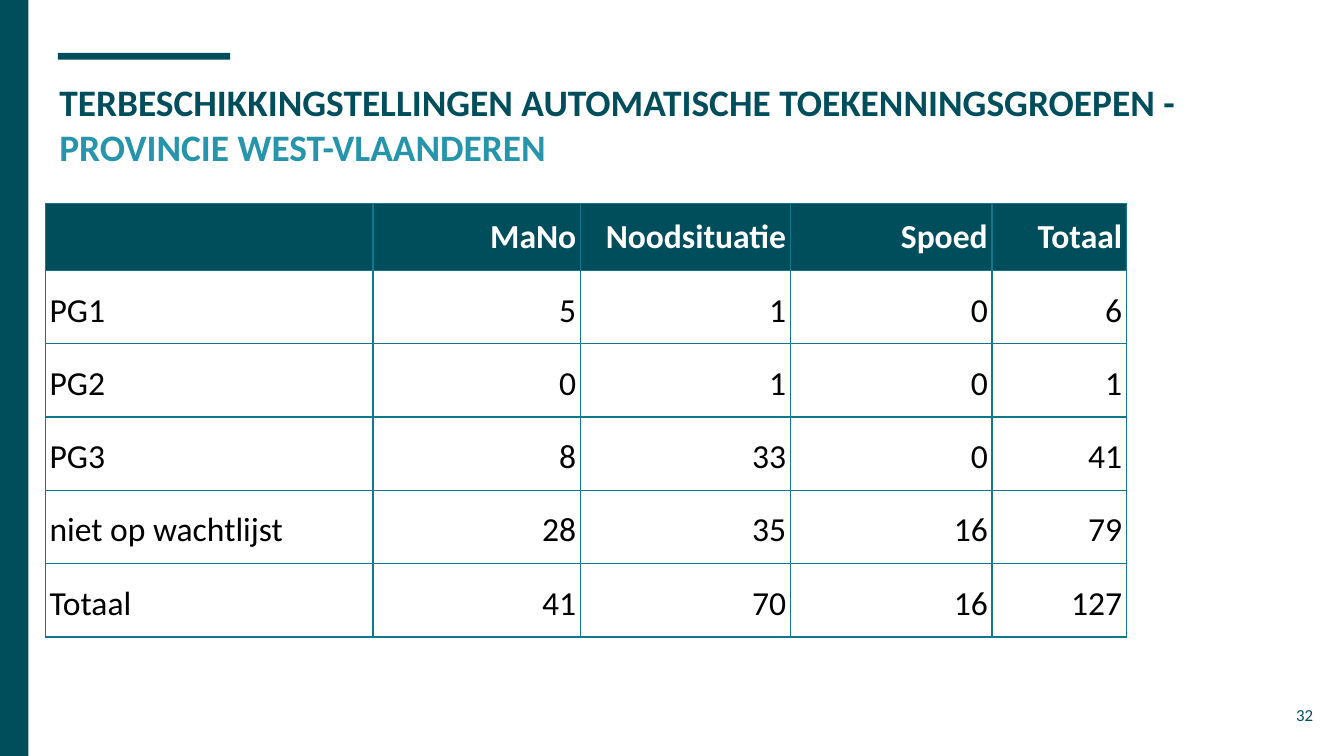
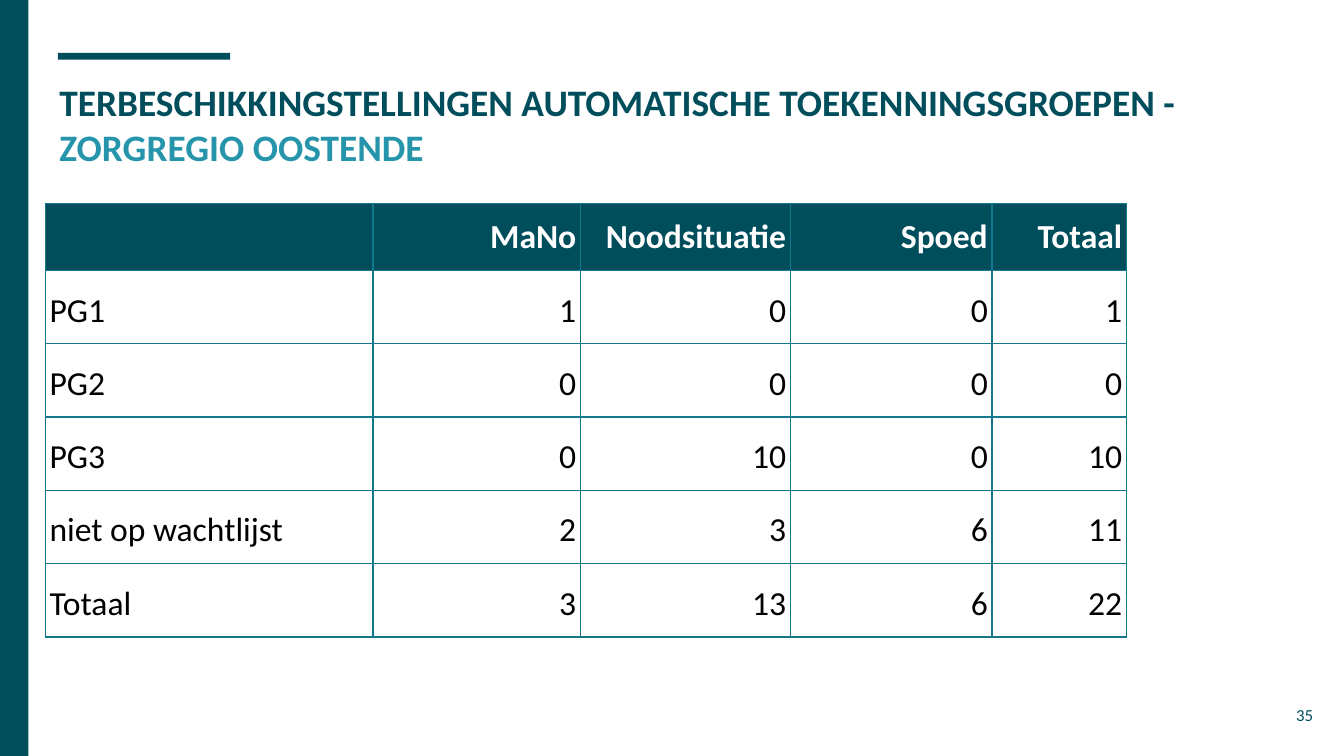
from lxml.etree import SubElement
from pptx import Presentation
from pptx.dml.color import RGBColor
from pptx.enum.shapes import MSO_SHAPE as Shape
from pptx.enum.text import MSO_ANCHOR as Anchor, PP_ALIGN as Align
from pptx.oxml.ns import qn
from pptx.util import Emu, Pt

PX = 5715  # EMU per px, 160 px to the inch
WIDTH, HEIGHT = 1600, 900

PETROL = RGBColor(0x00, 0x4D, 0x5C)
TEAL = RGBColor(0x26, 0x95, 0xAB)
BORDER = RGBColor(0x11, 0x78, 0x8C)
WHITE = RGBColor(0xFF, 0xFF, 0xFF)
BLACK = RGBColor(0x00, 0x00, 0x00)

FONT = "Calibri"
TITLE = "TERBESCHIKKINGSTELLINGEN AUTOMATISCHE TOEKENNINGSGROEPEN - "
HEADERS = ["", "MaNo", "Noodsituatie", "Spoed", "Totaal"]
GROUPS = ["PG1", "PG2", "PG3", "niet op wachtlijst"]
COLUMN_WIDTHS = [390, 247, 250, 240, 160]
ROW_HEIGHT = 79
TABLE_FRAME = 525

# (region, page number, counts per group for MaNo, Noodsituatie, Spoed)
REGIONS = [
    ("PROVINCIE WEST-VLAANDEREN", 32,
     [(5, 1, 0), (0, 1, 0), (8, 33, 0), (28, 35, 16)]),
    ("ZORGREGIO OOSTENDE", 35,
     [(1, 0, 0), (0, 0, 0), (0, 10, 0), (2, 3, 6)]),
]


def px(*lengths):
    return [Emu(length * PX) for length in lengths]


def with_totals(counts):
    """Return labelled rows with a total column and a total row added."""
    counts = counts + [tuple(map(sum, zip(*counts)))]
    return [[label, *row, sum(row)] for label, row in zip(GROUPS + ["Totaal"], counts)]


class Deck:
    def __init__(self):
        self.file = Presentation()
        self.file.slide_width, self.file.slide_height = px(WIDTH, HEIGHT)
        self.page = None

    def add_page(self):
        self.page = self.file.slides.add_slide(self.file.slide_layouts[6])
        self.bar(69, 63, 205, 8)
        self.bar(0, 0, 34, HEIGHT)

    def bar(self, *place):
        bar = self.page.shapes.add_shape(Shape.RECTANGLE, *px(*place))
        bar.shadow.inherit = False
        bar.fill.solid()
        bar.fill.fore_color.rgb = PETROL
        bar.line.fill.background()

    def style(self, para, size, color=None, bold=False, align=Align.LEFT):
        para.alignment = align
        font = para.font
        font.name, font.size, font.bold = FONT, Pt(size), bold
        if color is not None:
            font.color.rgb = color

    def text_box(self, *place, anchor=Anchor.TOP):
        """Add a wrapping text box and return its first paragraph."""
        frame = self.page.shapes.add_textbox(*px(*place)).text_frame
        frame.word_wrap = True
        frame.vertical_anchor = anchor
        (frame.margin_left, frame.margin_top,
         frame.margin_right, frame.margin_bottom) = px(16, 16, 16, 16)
        return frame.paragraphs[0]

    def title(self, region):
        para = self.text_box(55, 78, 1491, 133)
        self.style(para, 20, bold=True)
        for text, color in ((TITLE, PETROL), (region, TEAL)):
            span = para.add_run()
            span.text = text
            span.font.color.rgb = color

    def page_number(self, number):
        para = self.text_box(1483, 817, 96, 69, anchor=Anchor.MIDDLE)
        para.text = str(number)
        self.style(para, 9, PETROL, align=Align.RIGHT)

    def borders(self, cell):
        properties = cell._tc.get_or_add_tcPr()
        for side in ("a:lnL", "a:lnR", "a:lnT", "a:lnB"):
            line = SubElement(properties, qn(side), w=str(Pt(0.75)))
            fill = SubElement(line, qn("a:solidFill"))
            SubElement(fill, qn("a:srgbClr"), val=str(BORDER))

    def cell(self, cell, value, is_header, is_label):
        (cell.margin_left, cell.margin_top,
         cell.margin_right, cell.margin_bottom) = px(5, 16, 5, 16)
        self.borders(cell)
        cell.text = str(value)
        para = cell.text_frame.paragraphs[0]
        self.style(para, 18, WHITE if is_header else BLACK, is_header,
                   Align.LEFT if is_label else Align.RIGHT)
        if is_header:
            cell.fill.solid()
            cell.fill.fore_color.rgb = PETROL
        else:
            cell.fill.background()
            cell.vertical_anchor = Anchor.BOTTOM
            para.line_spacing = 1.15

    def table(self, left, top, rows):
        place = px(left, top, sum(COLUMN_WIDTHS), ROW_HEIGHT * len(rows))
        frame = self.page.shapes.add_table(len(rows), len(COLUMN_WIDTHS), *place)
        table = frame.table
        table.first_row = table.horz_banding = False
        for column, width in zip(table.columns, px(*COLUMN_WIDTHS)):
            column.width = width
        frame.width, frame.height = px(TABLE_FRAME, TABLE_FRAME)
        for i, row in enumerate(rows):
            for j, value in enumerate(row):
                self.cell(table.cell(i, j), value, is_header=i == 0, is_label=j == 0)


def main():
    deck = Deck()
    for region, number, counts in REGIONS:
        deck.add_page()
        deck.title(region)
        deck.page_number(number)
        deck.table(54, 242, [HEADERS] + with_totals(counts))
    deck.file.save("out.pptx")


if __name__ == "__main__":
    main()
